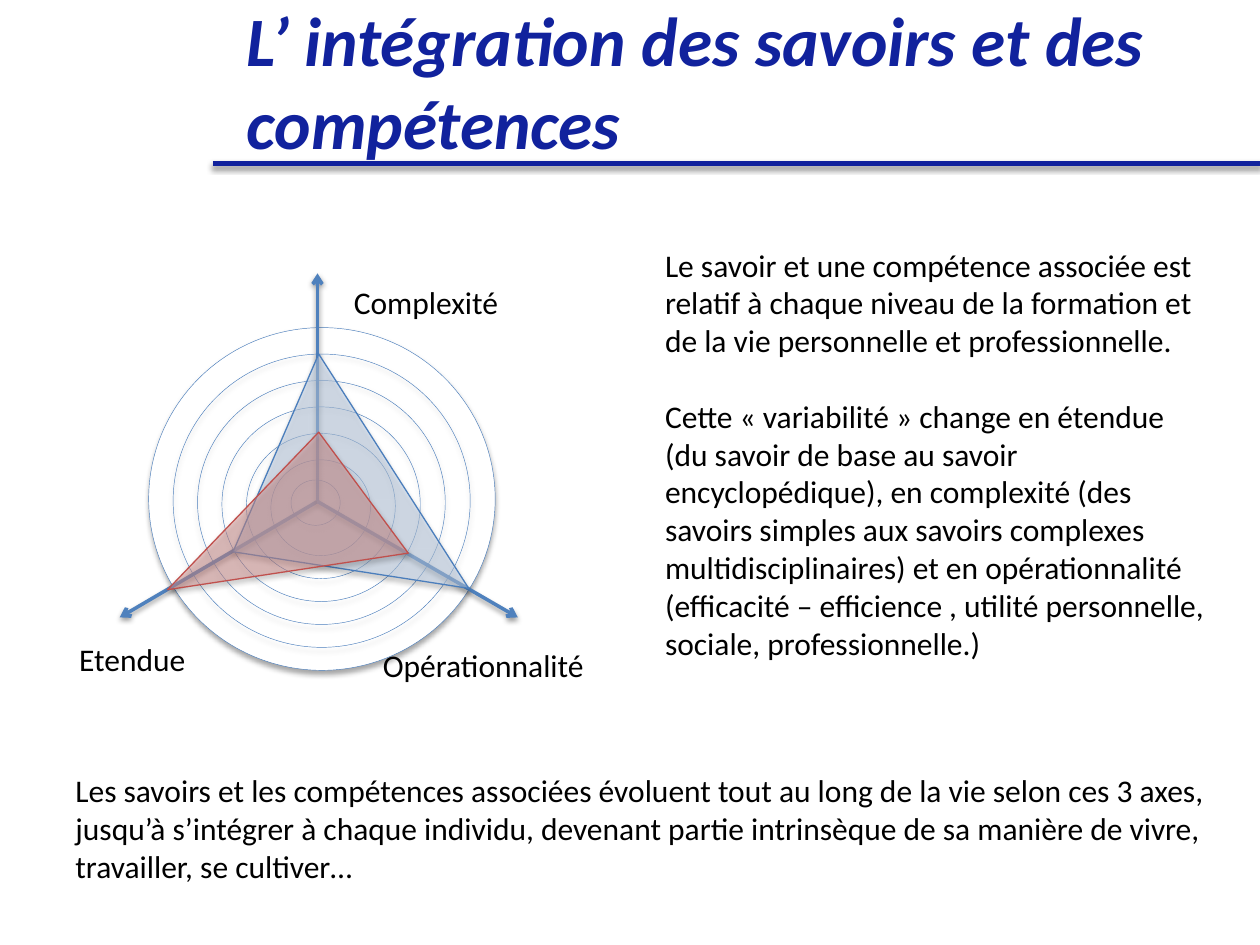
from lxml.etree import SubElement
from pptx import Presentation
from pptx.dml.color import RGBColor
from pptx.enum.shapes import MSO_CONNECTOR, MSO_SHAPE
from pptx.enum.text import MSO_ANCHOR, MSO_AUTO_SIZE, PP_ALIGN
from pptx.oxml.ns import qn
from pptx.util import Inches, Pt

NAVY = RGBColor(0x11, 0x22, 0x9D)
BLACK = RGBColor(0, 0, 0)
WHITE = RGBColor(0xFF, 0xFF, 0xFF)
AXIS_BLUE = RGBColor(0x4F, 0x81, 0xBD)
RING_BLUE = RGBColor(0x4B, 0x7E, 0xBC)
PALE_BLUE = RGBColor(0xC6, 0xD9, 0xF1)
PALE_RED = RGBColor(0xD9, 0x96, 0x94)
RED = RGBColor(0xC0, 0x50, 0x4D)

FONT = "Calibri"
ORIGIN = (2.52, 3.98)
AXIS_TIPS = [(0.95, 4.9), (2.52, 2.17), (4.11, 4.9)]
OUTER_RING = (1.18, 2.6, 2.75, 2.72)
INNER_RING = (2.15, 3.65, 0.79, 0.76)
CENTRE_RING = (2.31, 3.81, 0.39, 0.36)
RING_STEPS = 5

TITLE = "L’\u00a0intégration des savoirs et des compétences"
EXPLANATION = [
    "Le savoir et une compétence associée est relatif à chaque niveau de la "
    "formation et de la vie personnelle et professionnelle.",
    "Cette «\u00a0variabilité\u00a0» change en étendue (du savoir de base au savoir "
    "encyclopédique), en complexité (des savoirs simples aux savoirs complexes "
    "multidisciplinaires) et en opérationnalité (efficacité – efficience , "
    "utilité personnelle, sociale, professionnelle.)",
]
CONCLUSION = (
    "Les savoirs et les compétences associées évoluent tout au long de la vie "
    "selon ces 3 axes, jusqu’à s’intégrer à chaque individu, devenant partie "
    "intrinsèque de sa manière de vivre, travailler, se cultiver…"
)


def add_shadow(effects, opacity, distance):
    """Put a soft black shadow, falling straight down, in an effect list."""
    shadow = SubElement(effects, qn("a:outerShdw"), blurRad=str(Pt(3.1)),
                        dist=str(Pt(distance)), dir="5400000", rotWithShape="0")
    color = SubElement(shadow, qn("a:srgbClr"), val="000000")
    SubElement(color, qn("a:alpha"), val=str(opacity * 1000))


def add_shape_shadow(shape):
    shape.shadow.inherit = False
    add_shadow(shape._element.spPr.find(qn("a:effectLst")), 35, 1.8)


def add_line(page, start, end, color, width, arrow=False):
    line = page.shapes.add_connector(
        MSO_CONNECTOR.STRAIGHT, *(Inches(value) for value in start + end))
    line.line.color.rgb = color
    line.line.width = Pt(width)
    if arrow:
        SubElement(line.line._get_or_add_ln(), qn("a:tailEnd"), type="arrow")
    add_shadow(SubElement(line._element.spPr, qn("a:effectLst")), 38, 1.6)


def add_text(page, place, paragraphs, align=PP_ALIGN.LEFT, gap=0):
    box = page.shapes.add_textbox(*(Inches(value) for value in place))
    frame = box.text_frame
    frame.word_wrap = True
    frame.auto_size = MSO_AUTO_SIZE.SHAPE_TO_FIT_TEXT
    frame.text = "\n".join(paragraphs)
    for para in frame.paragraphs:
        para.alignment = align
        para.font.name = FONT
        para.font.size = Pt(18)
        para.font.color.rgb = BLACK
    for para in frame.paragraphs[1:]:
        para.space_before = Pt(gap)
    return frame


def add_title(page):
    frame = add_text(page, (1.86, 0.01, 7.64, 1.25), [TITLE])
    frame.auto_size = MSO_AUTO_SIZE.NONE
    frame.vertical_anchor = MSO_ANCHOR.MIDDLE
    font = frame.paragraphs[0].font
    font.size = Pt(39.6)
    font.bold = font.italic = True
    font.color.rgb = NAVY


def add_ring(page, place, filled=False):
    ring = page.shapes.add_shape(
        MSO_SHAPE.OVAL, *(Inches(value) for value in place))
    if filled:
        ring.fill.solid()
        ring.fill.fore_color.rgb = WHITE
    else:
        ring.fill.background()
    ring.line.color.rgb = RING_BLUE
    ring.line.width = Pt(0.25)
    add_shape_shadow(ring)


def add_profile(page, corners, fill, outline):
    """Draw a half-transparent triangle with one corner on each axis."""
    points = [(Inches(x), Inches(y)) for x, y in corners]
    builder = page.shapes.build_freeform(*points[0])
    builder.add_line_segments(points[1:], close=True)
    profile = builder.convert_to_shape()
    profile.fill.solid()
    profile.fill.fore_color.rgb = fill
    color = profile._element.spPr.find(qn("a:solidFill"))[0]
    SubElement(color, qn("a:alpha"), val="49000")
    profile.line.color.rgb = outline
    profile.line.width = Pt(0.75)
    add_shape_shadow(profile)


def add_radar(page):
    add_text(page, (2.94, 5.08, 2.01, 0.4), ["Opérationnalité"])
    add_text(page, (0.43, 5.03, 1.14, 0.4), ["Etendue"], PP_ALIGN.RIGHT)
    add_text(page, (2.71, 2.2, 1.68, 0.4), ["Complexité"])
    add_ring(page, OUTER_RING, filled=True)
    for tip in AXIS_TIPS:
        add_line(page, ORIGIN, tip, AXIS_BLUE, 2, arrow=True)
    for step in range(1, RING_STEPS + 1):
        add_ring(page, [outer + (inner - outer) * step / RING_STEPS
                        for outer, inner in zip(OUTER_RING, INNER_RING)])
    add_ring(page, CENTRE_RING)
    add_profile(page, [(2.53, 2.81), (3.72, 4.67), (1.85, 4.38)],
                PALE_BLUE, RING_BLUE)
    add_profile(page, [(1.33, 4.68), (2.53, 3.43), (3.24, 4.39)],
                PALE_RED, RED)


def main():
    deck = Presentation()
    deck.slide_width = Inches(10)
    deck.slide_height = Inches(7.5)
    page = deck.slides.add_slide(deck.slide_layouts[6])
    add_line(page, (1.69, 1.3), (10, 1.3), NAVY, 3)
    add_title(page)
    add_radar(page)
    add_text(page, (5.18, 1.9, 4.53, 4.04), EXPLANATION, gap=21.6)
    add_text(page, (0.5, 6.07, 9.21, 1.01), [CONCLUSION])
    deck.save("out.pptx")


if __name__ == "__main__":
    main()
